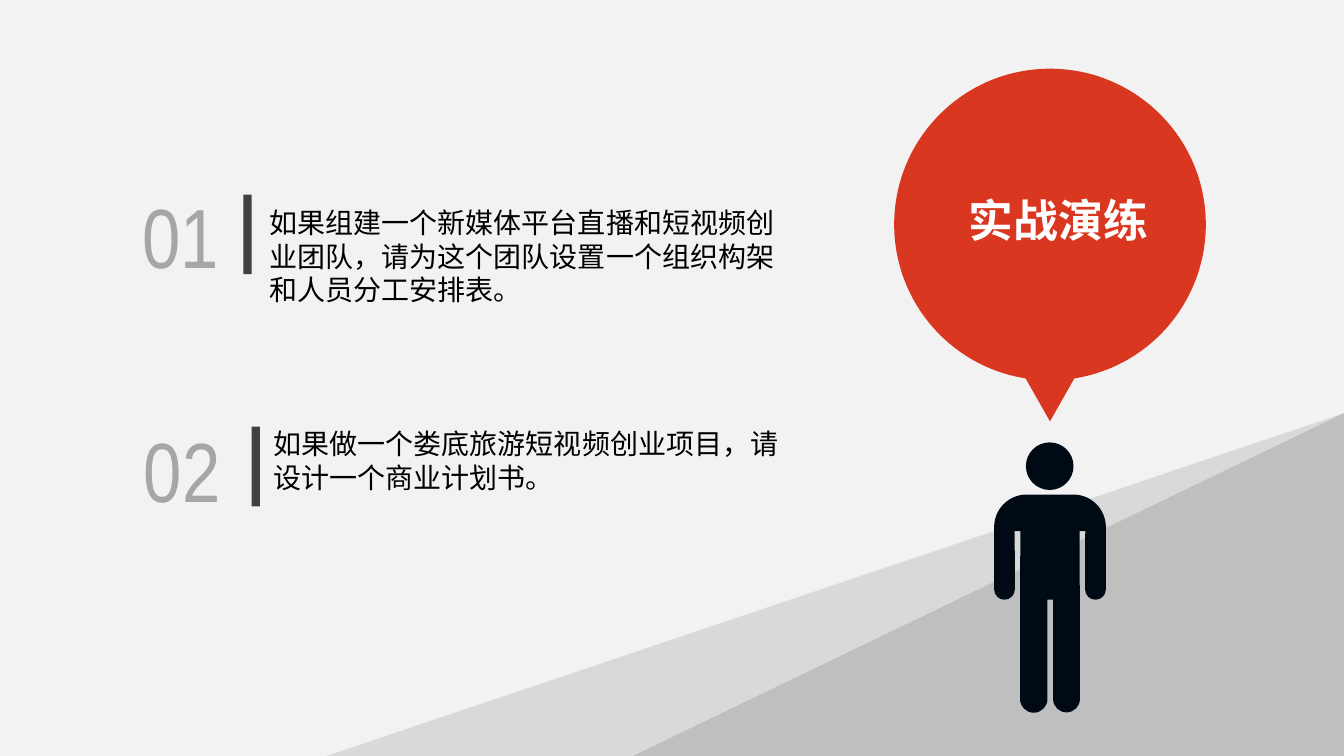
from math import cos, radians, sin, tan

from lxml.etree import SubElement
from pptx import Presentation
from pptx.dml.color import RGBColor
from pptx.enum.shapes import MSO_SHAPE
from pptx.enum.text import MSO_AUTO_SIZE
from pptx.oxml.ns import qn
from pptx.util import Pt

# Content: number box, bar and task text, each with its place in points
TITLE = "实战演练"
TASKS = [
    dict(number="01", number_box=(101.9, 128.2, 55.4, 80), bar=(173.9, 139),
         text="如果组建一个新媒体平台直播和短视频创业团队，请为这个团队设置一个组织构架和人员分工安排表。",
         text_box=(192.5, 143.3, 370.8, 80)),
    dict(number="02", number_box=(102.7, 295.2, 62.6, 80), bar=(179.8, 304.8),
         text="如果做一个娄底旅游短视频创业项目，请设计一个商业计划书。",
         text_box=(195.4, 301.4, 370.8, 55.4)),
]

WIDTH, HEIGHT = 960, 540
SLOPE_TOP = 295.2
BAR_W, BAR_H = 5.8, 56.9
AXIS = 750  # centre line of the figure and the bubble
UNITS = 100  # outline units per point

PAPER = RGBColor(0xF2, 0xF2, 0xF2)
LIGHT_SLOPE = RGBColor(0xD9, 0xD9, 0xD9)
DARK_SLOPE = RGBColor(0xBF, 0xBF, 0xBF)
INK = RGBColor(0x00, 0x0A, 0x14)
RED = RGBColor(0xD9, 0x37, 0x20)
BAR = RGBColor(0x40, 0x40, 0x40)
NUMBER = RGBColor(0xA6, 0xA6, 0xA6)
BLACK = RGBColor(0, 0, 0)
WHITE = RGBColor(0xFF, 0xFF, 0xFF)

prs = Presentation()
prs.slide_width, prs.slide_height = Pt(WIDTH), Pt(HEIGHT)
s = prs.slides.add_slide(prs.slide_layouts[6])


def paint(sp, color):
    sp.shadow.inherit = False
    sp.fill.solid()
    sp.fill.fore_color.rgb = color
    sp.line.fill.background()
    return sp


def add_preset(kind, box, color):
    return paint(s.shapes.add_shape(kind, *map(Pt, box)), color)


def arc(cx, cy, radius, start, end):
    """A point, then Bezier steps split at quarters; degrees run clockwise."""
    stops = [start, *(a for a in range(-360, 720, 90) if start < a < end), end]

    def at(degrees, tangent=0):
        a = radians(degrees)
        return (cx + radius * (cos(a) - tangent * sin(a)),
                cy + radius * (sin(a) + tangent * cos(a)))

    steps = [(at(start),)]
    for a, b in zip(stops, stops[1:]):
        k = 4 / 3 * tan(radians(b - a) / 4)
        steps.append((at(a, k), at(b, -k), at(b)))
    return steps


def add_outline(contours, color):
    """Each step of a contour is one point (line) or three (curve)."""
    contours = [[[(round(x * UNITS), round(y * UNITS)) for x, y in step]
                 for step in contour] for contour in contours]
    fb = s.shapes.build_freeform(*contours[0][0][-1], scale=Pt(1) / UNITS)
    for i, contour in enumerate(contours):
        if i:
            fb.move_to(*contour[0][-1])
        fb.add_line_segments([step[-1] for step in contour[1:]], close=True)
    sp = paint(fb.convert_to_shape(), color)

    # Turn the lines that stand for curves into Bezier segments
    steps = [step for contour in contours for step in contour]
    left = min(step[-1][0] for step in steps)
    top = min(step[-1][1] for step in steps)
    outline = next(sp._element.iter(qn("a:path")))
    segments = [el for el in outline if el.tag != qn("a:close")]
    for el, step in zip(segments, steps):
        if len(step) == 3:
            curve = SubElement(outline, qn("a:cubicBezTo"))
            for x, y in step:
                SubElement(curve, qn("a:pt"), x=str(x - left), y=str(y - top))
            outline.replace(el, curve)


def add_text(text, box, size, color, font="Arial", bold=False, wrap=False):
    tf = s.shapes.add_textbox(*map(Pt, box)).text_frame
    tf.word_wrap = wrap
    tf.auto_size = MSO_AUTO_SIZE.SHAPE_TO_FIT_TEXT
    tf.margin_left = tf.margin_right = 0
    tf.margin_top = tf.margin_bottom = Pt(3.6)
    r = tf.paragraphs[0].add_run()
    r.text = text
    r.font.size, r.font.name, r.font.bold = Pt(size), font, bold
    r.font.color.rgb = color


# Backdrop and slopes rising to the right edge
add_preset(MSO_SHAPE.RECTANGLE, (0, 0, WIDTH, HEIGHT), PAPER)
for left, color in ((233.3, LIGHT_SLOPE), (452.2, DARK_SLOPE)):
    sp = add_preset(MSO_SHAPE.RIGHT_TRIANGLE,
                    (left, SLOPE_TOP, WIDTH - left, HEIGHT - SLOPE_TOP), color)
    sp._element.spPr.get_or_add_xfrm().set("flipH", "1")

# Figure: body clockwise from the right shoulder, then the head
armpit_right = [((AXIS + 25.2, 379.4),), ((AXIS + 21.2, 379.4),)]
armpit_left = [((AXIS - 21.2, 379.4),), ((AXIS - 25.2, 379.4),)]
crotch = [((AXIS + 2.2, 428.4),), ((AXIS - 1.8, 428.4),)]
body = [
    *arc(AXIS + 16.7, 376.5, 23.2, -90, 0),
    *arc(AXIS + 32.5, 421, 7.4, 0, 180),
    *armpit_right,
    *arc(AXIS + 11.8, 499.3, 9.6, 0, 180),
    *crotch,
    *arc(AXIS - 11.6, 499.3, 9.8, 0, 180),
    *armpit_left,
    *arc(AXIS - 32.5, 421, 7.4, 0, 180),
    *arc(AXIS - 16.7, 376.5, 23.2, 180, 270),
]
head = arc(AXIS - 0.2, 333, 17, 0, 360)
add_outline([body, head], INK)

# Speech bubble: a circle left open at the bottom for its tail
add_outline([arc(AXIS, 160.4, 111.3, 99, 441) + [((AXIS, 301),)]], RED)
add_text(TITLE, (691.9, 133.9, 129.6, 46.1), 32, WHITE, bold=True)

# Numbered tasks
for task in TASKS:
    add_preset(MSO_SHAPE.RECTANGLE, (*task["bar"], BAR_W, BAR_H), BAR)
    add_text(task["text"], task["text_box"], 20, BLACK, wrap=True)
    add_text(task["number"], task["number_box"], 60, NUMBER, font="Arial Narrow")

prs.save("out.pptx")
